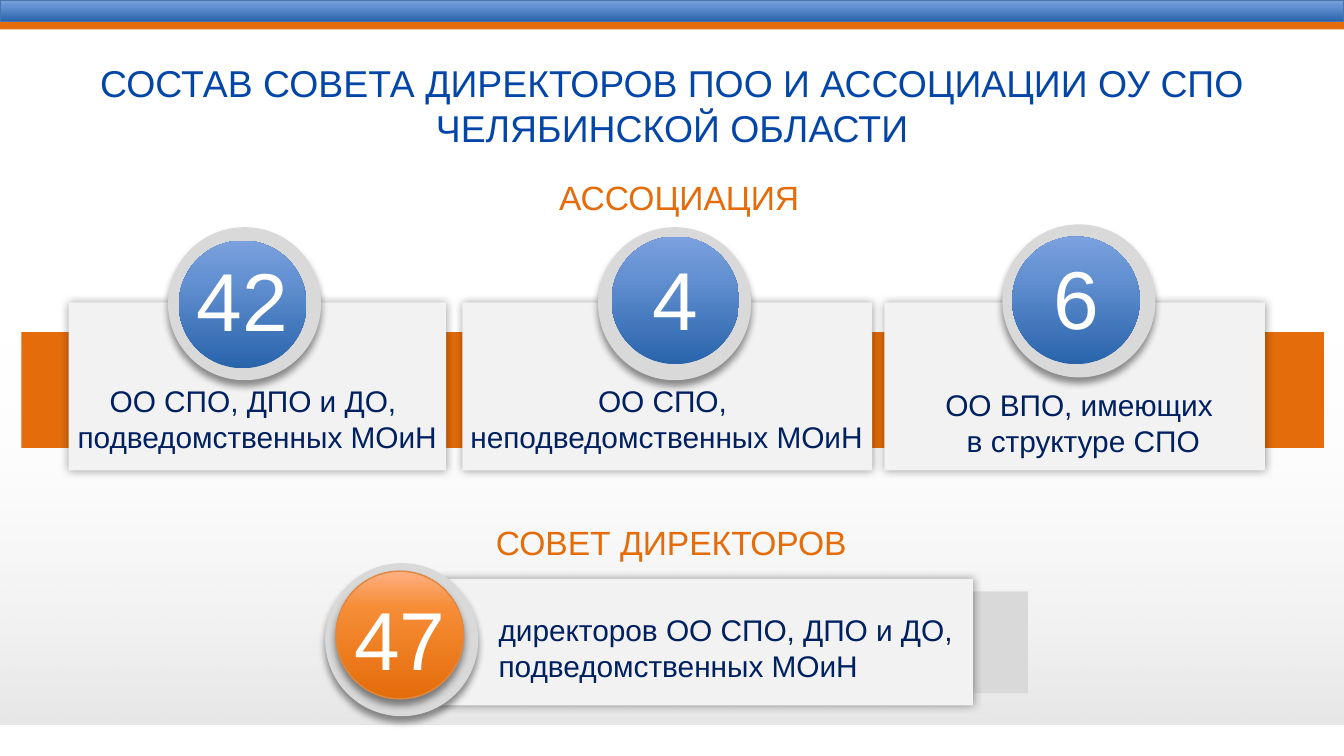
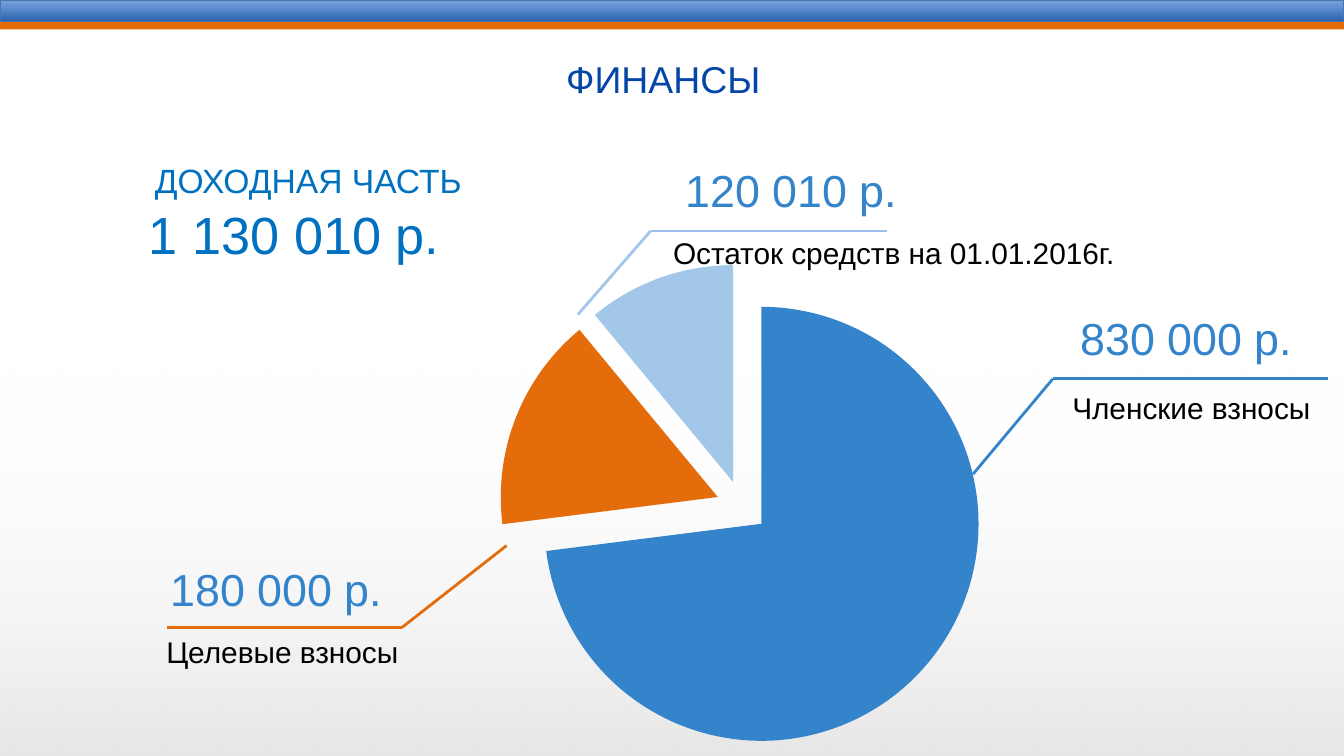
"""Build two slides on the association members and its finances."""
from dataclasses import dataclass

from lxml import etree
from pptx import Presentation
from pptx.chart.data import CategoryChartData
from pptx.dml.color import RGBColor
from pptx.enum.chart import XL_CHART_TYPE
from pptx.enum.shapes import MSO_CONNECTOR, MSO_SHAPE
from pptx.enum.text import MSO_ANCHOR, MSO_AUTO_SIZE, PP_ALIGN
from pptx.oxml import parse_xml
from pptx.oxml.ns import nsdecls, qn
from pptx.util import Pt

RECT, OVAL = MSO_SHAPE.RECTANGLE, MSO_SHAPE.OVAL
STRAIGHT = MSO_CONNECTOR.STRAIGHT
LEFT, CENTER = PP_ALIGN.LEFT, PP_ALIGN.CENTER
TOP, MIDDLE = MSO_ANCHOR.TOP, MSO_ANCHOR.MIDDLE
FIT, NO_FIT = MSO_AUTO_SIZE.SHAPE_TO_FIT_TEXT, MSO_AUTO_SIZE.NONE
PIE = XL_CHART_TYPE.PIE

FONT = "Arial"
SLIDE_W, SLIDE_H = 720, 405
RING, DISK = 82, 68.4
COLORS = {
    "title": "0446A8", "orange": "E46C0A", "navy": "002060", "azure": "0070C0",
    "card": "F2F2F2", "grey": "D9D9D9", "white": "FFFFFF", "black": "000000",
    "blue": "3484CC", "sky": "A2C7E8", "pale": "9EBCEC",
    "bar_line": "4875AC", "disk_line": "E08840",
}
BLUE_STOPS = [(0, "2964AB", 100), (72, "6592D3", 100), (100, "7BA1DE", 100)]
ORANGE_STOPS = [(0, "E46C0A", 100), (72, "F68D36", 100), (100, "FFB083", 100)]
SHADE_STOPS = [(0, "000000", 10), (100, "FFFFFF", 0)]


@dataclass
class Shadow:
    """Outer shadow of a shape."""
    alpha: int
    blur: float
    dist: float
    angle: int


CARD_SHADOW = Shadow(40, 5, 0, 0)
BADGE_SHADOW = Shadow(43, 4, 3, 90)


@dataclass
class Card:
    """Member group card with the box of its label."""
    x: float
    w: float
    label_x: float
    label_y: float
    label_w: float
    lines: list


@dataclass
class Badge:
    """Number on a disk inside a ring."""
    number: str
    ring: tuple
    disk: tuple
    number_y: float
    number_w: float


@dataclass
class Callout:
    """Income item with its leader line."""
    amount: str
    caption: str
    color: str
    rule_color: str
    tip: tuple
    elbow: tuple
    rule_end: float
    amount_at: tuple
    caption_box: tuple


CARDS = [
    Card(36.7, 202.3, 28, 201.6, 219.6, ["ОО СПО, ДПО и ДО, ", "подведомственных МОиН"]),
    Card(247.7, 219.6, 239.8, 201.6, 234.7, ["ОО СПО, ", "неподведомственных МОиН"]),
    Card(473.8, 203.8, 466.6, 203.8, 227.5, ["ОО ВПО, имеющих ", "в структуре СПО"]),
]
BADGES = [
    Badge("42", (90, 121.7), (95.8, 128.9), 130.3, 64),
    Badge("4", (320.4, 121.7), (327.6, 126.7), 129.6, 39.6),
    Badge("6", (537, 120.2), (542.2, 126.7), 128.9, 39.6),
]
COUNCIL_BADGE = Badge("47", (174.2, 301.7), (180, 306), 311.8, 64)
CALLOUTS = [
    Callout("830 000 р.", "Членские взносы", "blue", "blue", (521.3, 254), (564, 203),
            711.4, (571.7, 162.7), (567.4, 205.2, 161.3, 29.5)),
    Callout("180 000 р.", "Целевые взносы", "orange", "orange", (271.4, 292.3),
            (215.3, 336.2), 89.3, (84.2, 297.4), (82, 336.2, 196.6, 34.6)),
    Callout("120 010 р.", "Остаток средств на 01.01.2016г.", "sky", "pale",
            (309.6, 168.5), (348.5, 123.8), 475.2, (360, 83.5), (353.5, 122.4, 260, 26.6)),
]
INCOME_SHARES = {"1": (73, "blue"), "2": (16, "orange"), "3": (11, "sky")}


def rgb(name: str) -> RGBColor:
    """Return a palette colour."""
    return RGBColor.from_string(COLORS[name])


def set_gradient(sp, stops: list) -> None:
    """Fill a shape with an upward gradient."""
    sp.fill.background()
    gs = "".join(
        f'<a:gs pos="{pos * 1000}"><a:srgbClr val="{color}">'
        f'<a:alpha val="{alpha * 1000}"/></a:srgbClr></a:gs>'
        for pos, color, alpha in stops)
    grad = parse_xml(f'<a:gradFill {nsdecls("a")} rotWithShape="1"><a:gsLst>{gs}</a:gsLst>'
                     '<a:lin ang="16200000" scaled="0"/></a:gradFill>')
    spPr = sp._element.spPr
    spPr.replace(spPr.find(qn("a:noFill")), grad)


def set_shadow(sp, shadow: Shadow) -> None:
    """Give a shape a black outer shadow."""
    effects = sp._element.spPr.find(qn("a:effectLst"))
    effects.append(parse_xml(
        f'<a:outerShdw {nsdecls("a")} blurRad="{Pt(shadow.blur)}" dist="{Pt(shadow.dist)}" '
        f'dir="{shadow.angle * 60000}" algn="ctr" rotWithShape="0"><a:srgbClr val="000000">'
        f'<a:alpha val="{shadow.alpha * 1000}"/></a:srgbClr></a:outerShdw>'))


def add_shape(s, box: tuple, fill, kind=RECT, line: str = "", shadow: Shadow | None = None) -> None:
    """Draw a shape with a palette colour or gradient stops."""
    sp = s.shapes.add_shape(kind, *map(Pt, box))
    sp.shadow.inherit = False
    if isinstance(fill, str):
        sp.fill.solid()
        sp.fill.fore_color.rgb = rgb(fill)
    else:
        set_gradient(sp, fill)
    if line:
        sp.line.color.rgb = rgb(line)
        sp.line.width = Pt(0.75)
    else:
        sp.line.fill.background()
    if shadow:
        set_shadow(sp, shadow)


def write(tf, lines: list, size: float, color: str, align=LEFT, anchor=TOP) -> None:
    """Write one paragraph per line in one style."""
    tf.vertical_anchor = anchor
    for i, line in enumerate(lines):
        p = tf.add_paragraph() if i else tf.paragraphs[0]
        p.alignment = align
        r = p.add_run()
        r.text = line
        r.font.name = FONT
        r.font.size = Pt(size)
        r.font.color.rgb = rgb(color)


def add_text(s, box: tuple, lines: list, size: float, color: str,
             align=LEFT, anchor=TOP, wrap: bool = True) -> None:
    """Add a text box that fits its text."""
    tf = s.shapes.add_textbox(*map(Pt, box)).text_frame
    tf.word_wrap = wrap
    tf.auto_size = FIT
    write(tf, lines, size, color, align, anchor)


def add_line(s, start: tuple, end: tuple, color: str) -> None:
    """Draw a straight line without shadow."""
    cxn = s.shapes.add_connector(STRAIGHT, *map(Pt, start + end))
    cxn.line.color.rgb = rgb(color)
    cxn.line.width = Pt(1.5)
    etree.SubElement(cxn._element.spPr, qn("a:effectLst"))


def add_slide(prs, title: list, title_box: tuple, anchor, shade_y: float):
    """Add a slide with title, top bands and bottom shade."""
    s = prs.slides.add_slide(prs.slide_layouts[5])
    sp = s.shapes.title
    sp.left, sp.top, sp.width, sp.height = map(Pt, title_box)
    sp.text_frame.auto_size = NO_FIT
    write(sp.text_frame, title, 20, "title", CENTER, anchor)
    add_shape(s, (0, shade_y, SLIDE_W, 214), SHADE_STOPS)
    add_shape(s, (0, 4.3, SLIDE_W, 11.5), "orange")
    add_shape(s, (0, 0, SLIDE_W, 11.5), BLUE_STOPS, line="bar_line")
    return s


def add_badge(s, badge: Badge, stops: list, line: str = "", shadow: Shadow | None = None) -> None:
    """Draw a ring, its disk and the number."""
    add_shape(s, (*badge.ring, RING, RING), "grey", OVAL, shadow=BADGE_SHADOW)
    add_shape(s, (*badge.disk, DISK, DISK), stops, OVAL, line, shadow)
    x = badge.disk[0] + (DISK - badge.number_w) / 2
    add_text(s, (x, badge.number_y, badge.number_w, 60.5), [badge.number], 44, "white",
             CENTER, wrap=False)


def add_callout(s, item: Callout) -> None:
    """Draw a leader line with amount and caption."""
    add_line(s, item.elbow, item.tip, item.color)
    add_line(s, item.elbow, (item.rule_end, item.elbow[1]), item.rule_color)
    add_text(s, (*item.amount_at, 129, 36), [item.amount], 24, "blue", wrap=False)
    add_text(s, item.caption_box, [item.caption], 16, "black")


def add_income_pie(s) -> None:
    """Add the exploded pie of income shares."""
    data = CategoryChartData()
    data.categories = list(INCOME_SHARES)
    data.add_series("Series 1", [value for value, _ in INCOME_SHARES.values()])
    box = (174.2, 112.3, 455.8, 289.4)
    chart = s.shapes.add_chart(PIE, *map(Pt, box), data).chart
    chart.has_legend = False
    chart.has_title = False
    chart.font.name = FONT
    chart.font.size = Pt(18)
    chart.font.color.rgb = rgb("black")
    series = chart.plots[0].series[0]
    for i, (_, color) in enumerate(INCOME_SHARES.values()):
        fill = series.points[i].format.fill
        fill.solid()
        fill.fore_color.rgb = rgb(color)
    series._element.find(qn("c:dPt")).addprevious(
        parse_xml(f'<c:explosion {nsdecls("c")} val="12"/>'))
    area = chart._chartSpace.find(f'{qn("c:chart")}/{qn("c:plotArea")}')
    for layout in area.findall(qn("c:layout")):
        area.remove(layout)
    area.insert(0, parse_xml(
        f'<c:layout {nsdecls("c")}><c:manualLayout><c:layoutTarget val="inner"/>'
        '<c:xMode val="edge"/><c:yMode val="edge"/><c:x val="0.02"/><c:y val="0.1"/>'
        '<c:w val="0.94"/><c:h val="0.9"/></c:manualLayout></c:layout>'))


def build_members(prs) -> None:
    """Build the slide on council and association members."""
    title = ["СОСТАВ СОВЕТА ДИРЕКТОРОВ ПОО И АССОЦИАЦИИ ОУ СПО ", "ЧЕЛЯБИНСКОЙ ОБЛАСТИ "]
    s = add_slide(prs, title, (8.6, 28.8, 708.5, 55.4), MIDDLE, 174.2)
    add_text(s, (253.4, 91.4, 221, 28.8), ["АССОЦИАЦИЯ"], 18, "orange", CENTER, MIDDLE)
    add_shape(s, (11.5, 178, 697.7, 62), "orange")
    for card in CARDS:
        add_shape(s, (card.x, 162, card.w, 90), "card", shadow=CARD_SHADOW)
    for card in CARDS:
        add_text(s, (card.label_x, card.label_y, card.label_w, 46), card.lines, 16, "navy", CENTER)
    for badge in BADGES:
        add_badge(s, badge, BLUE_STOPS)
    add_text(s, (230.4, 275.8, 258.5, 28.8), ["СОВЕТ ДИРЕКТОРОВ"], 18, "orange", CENTER, MIDDLE)
    add_shape(s, (196.5, 316.8, 354.2, 54.7), "grey")
    add_shape(s, (236.2, 310.3, 285, 67.7), "card", shadow=CARD_SHADOW)
    add_text(s, (260, 324, 291.6, 46), ["директоров ОО СПО, ДПО и ДО,", "подведомственных МОиН"],
             16, "navy")
    add_badge(s, COUNCIL_BADGE, ORANGE_STOPS, "disk_line", BADGE_SHADOW)


def build_finances(prs) -> None:
    """Build the slide on income."""
    s = add_slide(prs, ["ФИНАНСЫ"], (172.5, 26.6, 365.8, 25.2), TOP, 191.5)
    add_text(s, (54.7, 82, 221, 28.8), ["ДОХОДНАЯ ЧАСТЬ"], 18, "azure", CENTER, MIDDLE)
    add_text(s, (72.7, 105, 172, 41), ["1 130 010 р."], 28, "azure", wrap=False)
    for item in CALLOUTS:
        add_callout(s, item)
    add_income_pie(s)


def main() -> None:
    """Build and save the presentation."""
    prs = Presentation()
    prs.slide_width, prs.slide_height = Pt(SLIDE_W), Pt(SLIDE_H)
    build_members(prs)
    build_finances(prs)
    prs.save("out.pptx")


if __name__ == "__main__":
    main()
